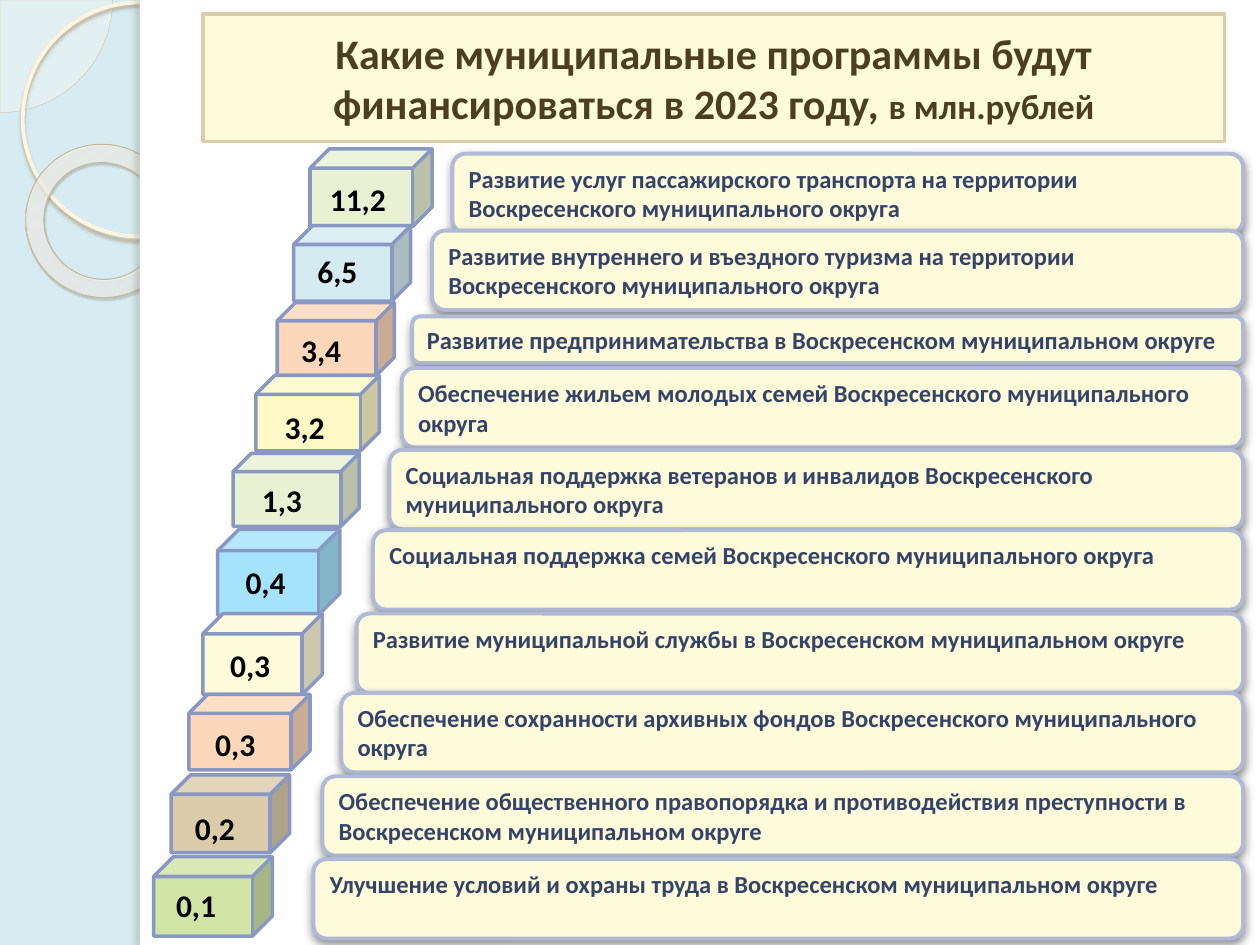
from lxml import etree
from pptx import Presentation
from pptx.dml.color import RGBColor
from pptx.enum.shapes import MSO_SHAPE
from pptx.enum.text import MSO_ANCHOR, MSO_AUTO_SIZE, PP_ALIGN
from pptx.oxml import parse_xml
from pptx.oxml.ns import nsdecls, qn
from pptx.util import Cm, Pt

PIE, OVAL, RING = MSO_SHAPE.PIE, MSO_SHAPE.OVAL, MSO_SHAPE.DONUT
RECT, ROUND, CUBE = MSO_SHAPE.RECTANGLE, MSO_SHAPE.ROUNDED_RECTANGLE, MSO_SHAPE.CUBE
LEFT, MID = PP_ALIGN.LEFT, PP_ALIGN.CENTER
TOP, CENTER = MSO_ANCHOR.TOP, MSO_ANCHOR.MIDDLE
FIXED = MSO_AUTO_SIZE.NONE
CREAM = "FEFBDA"


def paint(shape, fill=None, line=None, width=2, alpha=None, shade=None):
    if fill:
        shape.fill.solid()
        shape.fill.fore_color.rgb = RGBColor.from_string(fill)
        if alpha:
            tint = shape._element.spPr.find(".//" + qn("a:srgbClr"))
            etree.SubElement(tint, qn("a:alpha"), val=str(alpha * 1000))
    else:
        shape.fill.background()
    if line:
        shape.line.color.rgb = RGBColor.from_string(line)
        shape.line.width = Pt(width)
    else:
        shape.line.fill.background()
    shape.shadow.inherit = False
    if shade:
        tone, part, blur, dist, angle = shade
        glow = shape._element.spPr.find(qn("a:effectLst"))
        cast = etree.SubElement(
            glow, qn("a:outerShdw"), blurRad=str(Pt(blur)), dist=str(Pt(dist)),
            dir=str(angle * 60000), algn="ctr", rotWithShape="0")
        ink = etree.SubElement(cast, qn("a:srgbClr"), val=tone)
        etree.SubElement(ink, qn("a:alpha"), val=str(part * 1000))


def write(shape, text, size=14, color="000000", align=LEFT, anchor=TOP, tail="", small=20):
    frame = shape.text_frame
    frame.word_wrap = True
    frame.auto_size = FIXED
    frame.vertical_anchor = anchor
    para = frame.paragraphs[0]
    para.alignment = align
    for part, points in ((text, size), (tail, small)):
        if part:
            run = para.add_run()
            run.text = part
            run.font.name = "Calibri"
            run.font.size = Pt(points)
            run.font.bold = True
            run.font.color.rgb = RGBColor.from_string(color)


deck = Presentation()
deck.slide_width, deck.slide_height = Cm(25.4), Cm(19.05)
slide = deck.slides.add_slide(deck.slide_layouts[5])
slide.background.fill.solid()
slide.background.fill.fore_color.rgb = RGBColor.from_string("D6ECF2")
shapes = slide.shapes

decor = [
    (PIE, (-2.27, -2.27, 4.54, 4.54),
     dict(fill="FEFAF4", alpha=33, line="D3C39F", width=0.25)),
    (OVAL, (0.46, 0.05, 4.72, 4.72),
     dict(line="FFF5DE", width=2.15, shade=("B0A68F", 85, 2, 2, 90))),
    (RING, (0.51, 2.92, 3.12, 3.07),
     dict(line="C7B893", width=0.58, shade=("5A5444", 35, 1, 1.2, 75))),
    (RECT, (2.82, 0, 22.58, 19.05), dict(fill="FFFFFF")),
    (RECT, (2.82, 0, 0.2, 19.05),
     dict(fill="FFFFFF", shade=("736F63", 25, 3, 3, 180))),
]
for kind, place, look in decor:
    shape = shapes.add_shape(kind, *map(Cm, place))
    paint(shape, **look)
    if kind == PIE:
        shape.adjustments[0], shape.adjustments[1] = 0, 54
    elif kind == RING:
        shape.adjustments[0] = 0.12
        shape.rotation = 38.6
        stops = "".join(
            f'<a:gs pos="{pos}000"><a:srgbClr val="{tone}">'
            f'<a:alpha val="{part}000"/></a:srgbClr></a:gs>'
            for pos, tone, part in
            ((0, "FFFCF6", 70), (70, "FFFEFB", 55), (100, "F0D28E", 60)))
        blend = parse_xml(
            f'<a:gradFill {nsdecls("a")}><a:gsLst>{stops}</a:gsLst><a:path path="circle">'
            '<a:fillToRect l="-408000" t="-50000" r="508000" b="150000"/>'
            '</a:path></a:gradFill>')
        props = shape._element.spPr
        props.replace(props.find(qn("a:noFill")), blend)

title = shapes.title
shapes._spTree.append(title._element)
title.left, title.top, title.width, title.height = map(Cm, (4.09, 0.28, 20.6, 2.57))
title._element.spPr.append(parse_xml(
    f'<a:prstGeom {nsdecls("a")} prst="roundRect"><a:avLst/></a:prstGeom>'))
paint(title, CREAM, "DACCAB")
write(title, "Какие муниципальные программы будут финансироваться в 2023 году, ",
      size=24, color="4B3E21", align=MID, anchor=CENTER, tail="в млн.рублей")

rows = [
    ("11,2", "E8F2D3", (6.25, 3, 2.46, 1.57), (6.4, 3.51), (9.12, 3.1),
     "Развитие услуг пассажирского транспорта на территории Воскресенского муниципального округа"),
    ("6,5", "D4EBF1", (5.92, 4.55, 2.36, 1.52), (6.15, 4.95), (8.71, 4.65),
     "Развитие внутреннего и въездного туризма на территории Воскресенского муниципального округа"),
    ("3,4", "FDD7BA", (5.59, 6.1, 2.36, 1.47), (5.82, 6.55), (8.31, 6.38),
     "Развитие предпринимательства в Воскресенском муниципальном округе"),
    ("3,2", "FEF9C6", (5.16, 7.57, 2.49, 1.52), (5.49, 8.1), (8.1, 7.42),
     "Обеспечение жильем молодых семей Воскресенского муниципального округа"),
    ("1,3", "E8F2D3", (4.7, 9.14, 2.54, 1.47), (5.03, 9.58), (7.85, 9.07),
     "Социальная поддержка ветеранов и инвалидов Воскресенского муниципального округа"),
    ("0,4", "A4E3FA", (4.39, 10.67, 2.46, 1.73), (4.7, 11.23), (7.52, 10.69),
     "Социальная поддержка семей Воскресенского муниципального округа"),
    ("0,3", CREAM, (4.09, 12.37, 2.41, 1.63), (4.39, 12.9), (7.19, 12.37),
     "Развитие муниципальной службы в Воскресенском муниципальном округе"),
    ("0,3", "FDD7BA", (3.81, 14, 2.44, 1.52), (4.09, 14.5), (6.88, 13.97),
     "Обеспечение сохранности архивных фондов Воскресенского муниципального округа"),
    ("0,2", "DACCAB", (3.45, 15.62, 2.39, 1.57), (3.68, 16.18), (6.5, 15.65),
     "Обеспечение общественного правопорядка и противодействия преступности "
     "в Воскресенском муниципальном округе"),
    ("0,1", "D0E4A6", (3.1, 17.27, 2.39, 1.6), (3.3, 17.73), (6.32, 17.32),
     "Улучшение условий и охраны труда в Воскресенском муниципальном округе"),
]
edge = 25.06
for sum_, tone, place, spot, (left, top), name in rows:
    cube = shapes.add_shape(CUBE, *map(Cm, place))
    paint(cube, tone, "8898C3")
    high = 0.94 if sum_ == "3,4" else 1.6
    panel = shapes.add_shape(ROUND, Cm(left), Cm(top), Cm(edge - left), Cm(high))
    paint(panel, CREAM, "B0BAD7", 2.25, shade=("000000", 43, 5, 2, 90))
    write(panel, name, color="35436A")
    label = shapes.add_textbox(*map(Cm, spot), Cm(1.8), Cm(1.02))
    write(label, sum_, size=18)

deck.save("out.pptx")
